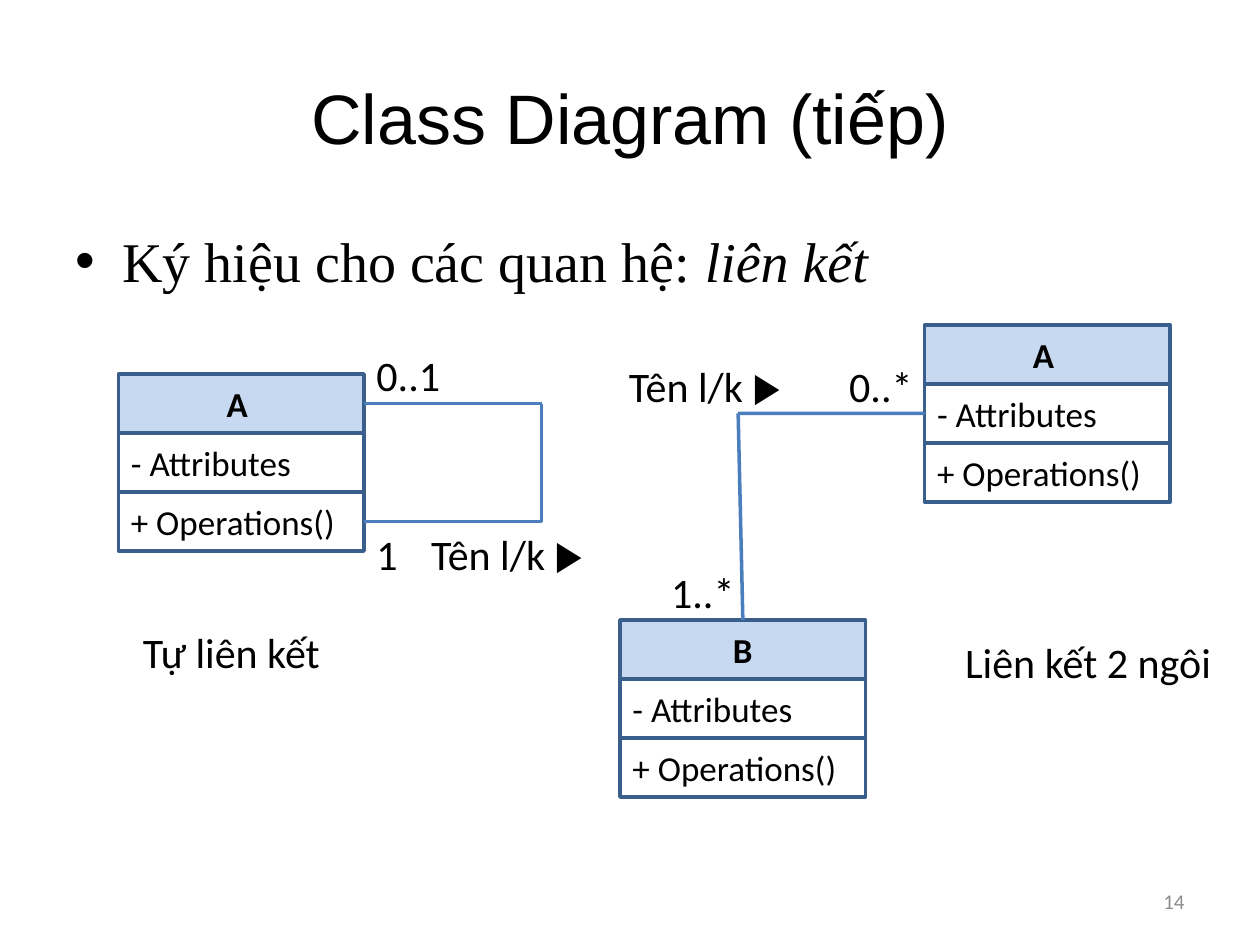
import pptx
import pptx.dml.color
import pptx.enum.shapes
import pptx.enum.text
import pptx.oxml.ns
import pptx.util
from lxml import etree

Cm = pptx.util.Cm
Pt = pptx.util.Pt
ALIGN = pptx.enum.text.PP_ALIGN
ANCHOR = pptx.enum.text.MSO_ANCHOR
TOP, LEFT, RIGHT = 0, 1, 3
CLASS_WIDTH = 4.95
ROW_HEIGHT = 1.19


def color(value):
    return pptx.dml.color.RGBColor.from_string(value)


def add_text(shape, text, size=24, font="Calibri", fill="000000", bold=False,
             italic=False, align=ALIGN.LEFT, anchor=ANCHOR.TOP):
    frame = shape.text_frame
    frame.word_wrap = True
    frame.vertical_anchor = anchor
    paragraph = frame.paragraphs[0]
    paragraph.alignment = align
    run = paragraph.add_run()
    run.text = text
    run.font.size = Pt(size)
    run.font.name = font
    run.font.bold = bold
    run.font.italic = italic
    run.font.color.rgb = color(fill)


def add_label(slide, text, left, top, width, height=1.27, **text_format):
    shape = slide.shapes.add_textbox(Cm(left), Cm(top), Cm(width), Cm(height))
    add_text(shape, text, **text_format)
    return shape


def add_association_name(slide, left, top):
    shape = add_label(slide, "Tên l/k ", left, top, 4.17, align=ALIGN.CENTER)
    add_text(shape, "▶", font="Courier New", align=ALIGN.CENTER)


def add_title(slide):
    title = slide.shapes.title
    title.left, title.top = Cm(1.27), Cm(0.76)
    title.width, title.height = Cm(22.86), Cm(3.18)
    add_text(title, "Class Diagram (tiếp)", size=40, font="Arial",
             align=ALIGN.CENTER, anchor=ANCHOR.MIDDLE)


def add_bullet_text(slide):
    shape = add_label(slide, "Ký hiệu cho các quan hệ: ", 1.27, 4.45, 22.86, 12.57,
                      size=32, font="Times New Roman")
    add_text(shape, "liên kết", size=32, font="Times New Roman", italic=True)
    paragraph = shape.text_frame.paragraphs[0]
    paragraph.space_before = Pt(6.4)
    properties = paragraph._p.get_or_add_pPr()
    properties.set("marL", str(Cm(0.95)))
    properties.set("indent", str(-Cm(0.95)))
    qn = pptx.oxml.ns.qn
    etree.SubElement(properties, qn("a:buFont"), typeface="Arial")
    etree.SubElement(properties, qn("a:buChar"), char="•")


def add_class(slide, name, left, top):
    group = slide.shapes.add_group_shape()
    rows = []
    for index, text in enumerate((name, "- Attributes", "+ Operations()")):
        row = group.shapes.add_shape(
            pptx.enum.shapes.MSO_SHAPE.RECTANGLE, Cm(left),
            Cm(top + index * ROW_HEIGHT), Cm(CLASS_WIDTH), Cm(ROW_HEIGHT))
        header = index == 0
        row.shadow.inherit = False
        row.fill.solid()
        row.fill.fore_color.rgb = color("C6D9F1" if header else "FFFFFF")
        row.line.color.rgb = color("3A5F8C")
        row.line.width = Pt(2)
        add_text(row, text, size=20, bold=header, anchor=ANCHOR.MIDDLE,
                 align=ALIGN.CENTER if header else ALIGN.LEFT)
        rows.append(row)
    return rows


def add_line(slide, start, end, row=None, side=None):
    line = slide.shapes.add_connector(
        pptx.enum.shapes.MSO_CONNECTOR.STRAIGHT,
        Cm(start[0]), Cm(start[1]), Cm(end[0]), Cm(end[1]))
    line.line.color.rgb = color("4B7EBC")
    line.line.width = Pt(2)
    etree.SubElement(line._element.spPr, pptx.oxml.ns.qn("a:effectLst"))
    if row is not None:
        line.begin_connect(row, side)


def add_self_association(slide):
    left, top = 2.39, 7.54
    header, attributes, operations = add_class(slide, "A ", left, top)
    edge, corner = left + CLASS_WIDTH, 10.92
    upper, lower = top + ROW_HEIGHT / 2, top + ROW_HEIGHT * 2.5
    add_line(slide, (edge, upper), (corner, upper), header, RIGHT)
    add_line(slide, (corner, upper), (corner, lower))
    add_line(slide, (edge, lower), (corner, lower), operations, RIGHT)
    add_label(slide, "0..1", edge, 6.93, 1.98)
    add_label(slide, "1", edge, 10.52, 1.4)
    add_association_name(slide, 8.13, 10.52)
    add_label(slide, "Tự liên kết", 1.78, 12.5, 5.77, align=ALIGN.CENTER)


def add_binary_association(slide):
    left, top = 18.64, 6.55
    attributes = add_class(slide, "A ", left, top)[1]
    b_left, b_top = 12.5, 12.5
    b_header = add_class(slide, "B", b_left, b_top)[0]
    middle = top + ROW_HEIGHT * 1.5
    corner = (14.88, middle)
    add_line(slide, (b_left + CLASS_WIDTH / 2, b_top), corner, b_header, TOP)
    add_line(slide, (left, middle), corner, attributes, LEFT)
    add_label(slide, "0..*", 16.87, 7.14, 1.98)
    add_label(slide, "1..*", 13.28, 11.3, 1.98)
    add_association_name(slide, 12.12, 7.14)
    add_label(slide, "Liên kết 2 ngôi", 19.05, 12.7, 5.77, align=ALIGN.CENTER)


def main():
    presentation = pptx.Presentation()
    presentation.slide_width = Cm(25.4)
    presentation.slide_height = Cm(19.05)
    slide = presentation.slides.add_slide(presentation.slide_layouts[5])
    add_title(slide)
    add_bullet_text(slide)
    add_label(slide, "14", 18.21, 17.65, 5.92, 1.02, size=12, fill="8C8C8C",
              align=ALIGN.RIGHT, anchor=ANCHOR.MIDDLE)
    add_self_association(slide)
    add_binary_association(slide)
    presentation.save("out.pptx")


if __name__ == "__main__":
    main()
